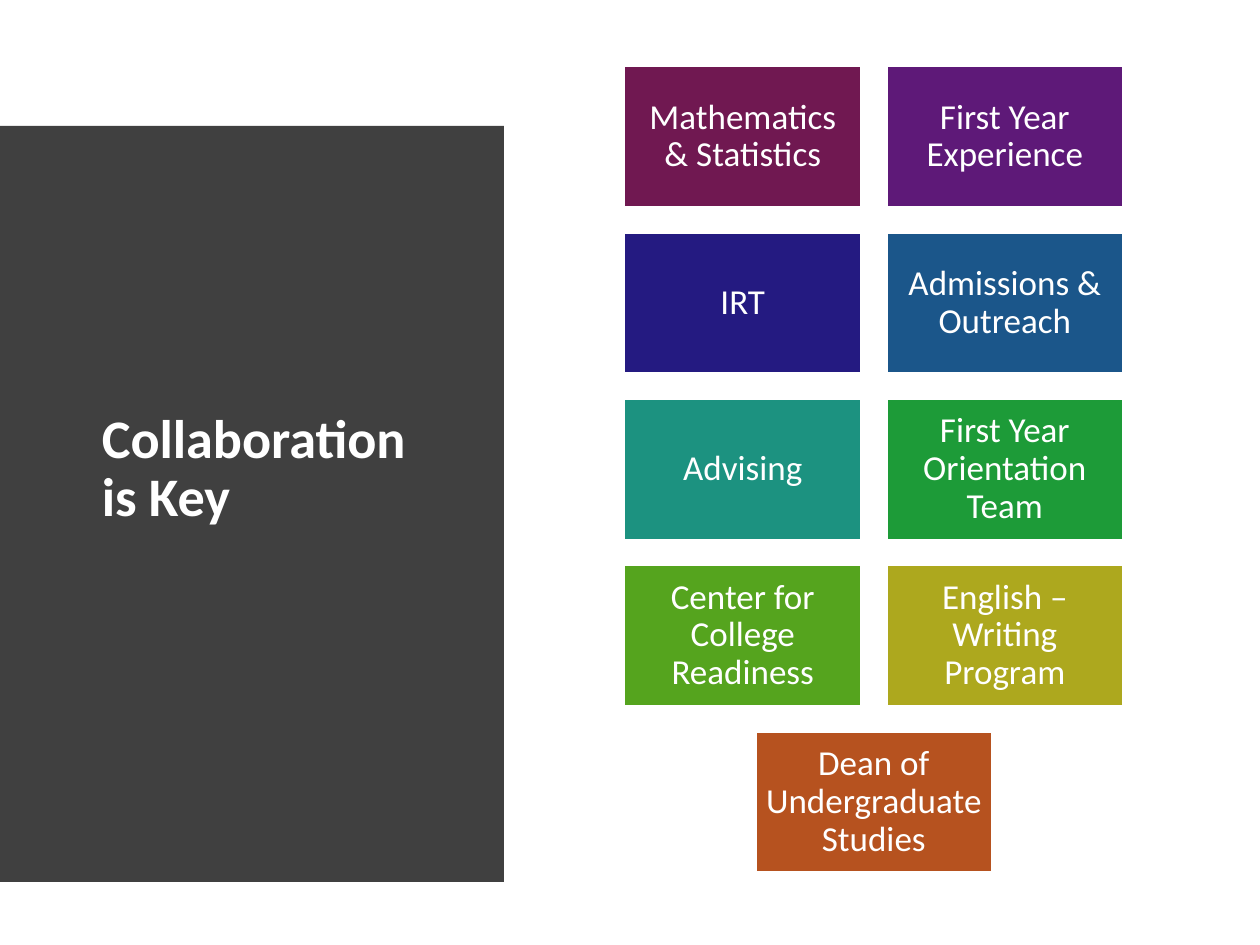
import pptx
import pptx.dml.color
import pptx.enum.shapes
import pptx.enum.text
import pptx.util

WHITE = "FFFFFF"
CHARCOAL = "404040"
COLUMNS = 2
PARTNERS = [
    ("Mathematics & Statistics", "701851"),
    ("First Year Experience", "5E1978"),
    ("IRT", "241A81"),
    ("Admissions & Outreach", "1B568A"),
    ("Advising", "1C9280"),
    ("First Year Orientation Team", "1D9B38"),
    ("Center for College Readiness", "55A41E"),
    ("English – Writing Program", "ADA81E"),
    ("Dean of Undergraduate Studies", "B6521F"),
]


def color(hex_string):
    return pptx.dml.color.RGBColor.from_string(hex_string)


class Page:
    """Holds the text style, the tile grid and the current slide."""

    font = "Calibri"
    line_spacing = 0.9
    grid_left, grid_top = 4.95, 0.52
    tile_width, tile_height = 1.89, 1.13
    column_step, row_step = 2.08, 1.32

    def __init__(self, deck):
        self.slide = deck.slides.add_slide(deck.slide_layouts[6])

    def add_text(self, box, text, size, align, bold=False):
        frame = box.text_frame
        frame.word_wrap = True
        frame.vertical_anchor = pptx.enum.text.MSO_ANCHOR.MIDDLE
        para = frame.paragraphs[0]
        para.alignment = align
        para.line_spacing = self.line_spacing
        span = para.add_run()
        span.text = text
        span.font.name = self.font
        span.font.size = pptx.util.Pt(size)
        span.font.bold = bold
        span.font.color.rgb = color(WHITE)
        return frame

    def curved_panel(self, left, top, width, height, bulge, fill, steps=48):
        """A panel whose right side bows outwards as a parabola."""
        points = []
        for step in range(steps + 1):
            share = step / steps
            bow = bulge * 4 * share * (1 - share)
            points.append((left + width - bulge + bow, top + height * share))
        points.append((left, top + height))
        builder = self.slide.shapes.build_freeform(
            left, top, scale=pptx.util.Inches(1))
        builder.add_line_segments(points, close=True)
        panel = builder.convert_to_shape()
        panel.shadow.inherit = False
        panel.fill.solid()
        panel.fill.fore_color.rgb = color(fill)
        panel.line.fill.background()

    def title(self, left, top, width, height, text):
        box = self.slide.shapes.add_textbox(
            *map(pptx.util.Inches, (left, top, width, height)))
        self.add_text(box, text, 31, pptx.enum.text.PP_ALIGN.LEFT, bold=True)

    def tile(self, column, row, text, fill):
        box = self.slide.shapes.add_shape(
            pptx.enum.shapes.MSO_SHAPE.RECTANGLE,
            *map(pptx.util.Inches, (
                self.grid_left + column * self.column_step,
                self.grid_top + row * self.row_step,
                self.tile_width, self.tile_height)))
        box.shadow.inherit = False
        box.fill.solid()
        box.fill.fore_color.rgb = color(fill)
        box.line.color.rgb = color(WHITE)
        box.line.width = pptx.util.Pt(2)
        frame = self.add_text(box, text, 20, pptx.enum.text.PP_ALIGN.CENTER)
        frame.margin_left = frame.margin_right = pptx.util.Inches(0.08)
        frame.margin_top = frame.margin_bottom = pptx.util.Inches(0.08)


def main():
    deck = pptx.Presentation()
    deck.slide_width = pptx.util.Inches(10)
    deck.slide_height = pptx.util.Inches(7.5)
    page = Page(deck)

    # Title on the dark panel
    page.curved_panel(0.4, 0.52, 3.59, 6.44, bulge=0.18, fill=CHARCOAL)
    page.title(0.71, 1.11, 2.8, 5.24, "Collaboration is Key")

    # Partner tiles, with a short last row centred
    for index, (name, fill) in enumerate(PARTNERS):
        row, column = divmod(index, COLUMNS)
        in_row = min(COLUMNS, len(PARTNERS) - row * COLUMNS)
        page.tile(column + (COLUMNS - in_row) / 2, row, name, fill)

    deck.save("out.pptx")


if __name__ == "__main__":
    main()
